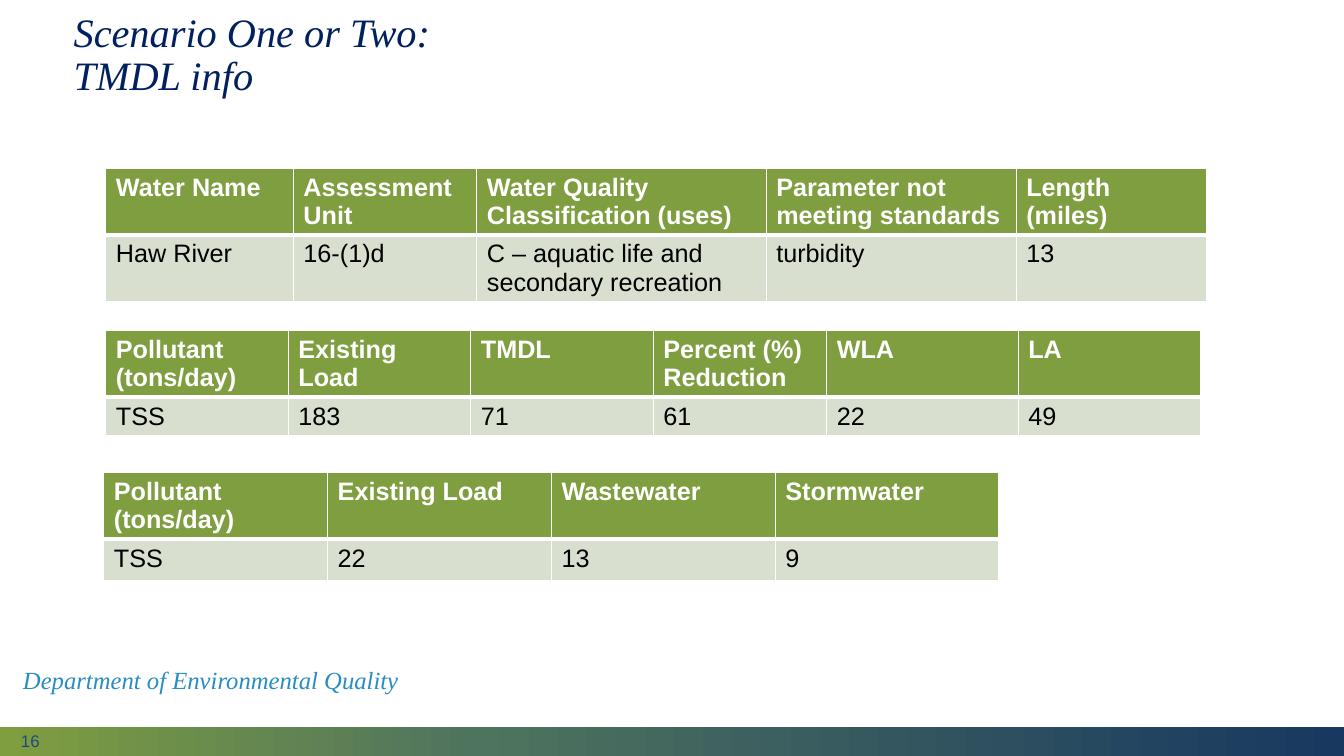
import copy
from dataclasses import dataclass

import pptx
import pptx.dml.color
import pptx.enum.shapes
import pptx.enum.text
import pptx.oxml
import pptx.oxml.ns
import pptx.util

Inches = pptx.util.Inches

COLORS = {
    "green": "7F9E3F",
    "teal": "4F745E",
    "deep_blue": "183860",
    "number_blue": "1F497D",
    "department_blue": "288DC2",
    "title_navy": "002060",
    "body_cell": "D8DFCF",
    "white": "FFFFFF",
    "black": "000000",
}
THIN_BORDER, THICK_BORDER = 1, 3


@dataclass
class TextStyle:
    font: str
    size: float
    color: str
    bold: bool = False
    italic: bool = False
    line_spacing: float = 1.0


@dataclass
class CellStyle:
    text: TextStyle
    fill: str
    borders: dict[str, int]


@dataclass
class DataTable:
    left: float
    top: float
    column_widths: list[float]
    row_heights: list[float]
    rows: list[list[str]]


TITLE_STYLE = TextStyle("Times New Roman", 28.8, "title_navy", italic=True, line_spacing=0.9)
DEPARTMENT_STYLE = TextStyle("Times New Roman", 17.6, "department_blue", italic=True, line_spacing=0.9)
NUMBER_STYLE = TextStyle("Arial", 12, "number_blue")

HEADER_CELL = CellStyle(
    TextStyle("Arial", 18, "white", bold=True), "green",
    {"L": THIN_BORDER, "R": THIN_BORDER, "T": THIN_BORDER, "B": THICK_BORDER},
)
BODY_CELL = CellStyle(
    TextStyle("Arial", 18, "black"), "body_cell",
    {"L": THIN_BORDER, "R": THIN_BORDER, "T": THICK_BORDER, "B": THIN_BORDER},
)

TABLES = [
    DataTable(1.05, 1.67, [1.86, 1.82, 2.87, 2.48, 1.89], [0.66, 0.65], [
        ["Water Name", "Assessment Unit", "Water Quality Classification (uses)",
         "Parameter not meeting standards", "Length (miles)"],
        ["Haw River", "16-(1)d", "C – aquatic life and secondary recreation", "turbidity", "13"],
    ]),
    DataTable(1.05, 3.28, [1.81, 1.81, 1.81, 1.72, 1.9, 1.81], [0.66, 0.37], [
        ["Pollutant (tons/day)", "Existing Load", "TMDL", "Percent (%) Reduction", "WLA", "LA"],
        ["TSS", "183", "71", "61", "22", "49"],
    ]),
    DataTable(1.03, 4.69, [2.22] * 4, [0.66, 0.41], [
        ["Pollutant (tons/day)", "Existing Load", "Wastewater", "Stormwater"],
        ["TSS", "22", "13", "9"],
    ]),
]


def rgb(name: str) -> pptx.dml.color.RGBColor:
    return pptx.dml.color.RGBColor.from_string(COLORS[name])


def write_lines(text_frame, lines: list[str], style: TextStyle) -> None:
    paragraph = text_frame.paragraphs[0]
    paragraph.alignment = pptx.enum.text.PP_ALIGN.LEFT
    paragraph.line_spacing = style.line_spacing
    for index, line in enumerate(lines):
        if index:
            paragraph.add_line_break()
        run = paragraph.add_run()
        run.text = line
        run.font.name = style.font
        run.font.size = pptx.util.Pt(style.size)
        run.font.bold = style.bold
        run.font.italic = style.italic
        run.font.color.rgb = rgb(style.color)


def fill_text_shape(shape, lines: list[str], style: TextStyle) -> None:
    text_frame = shape.text_frame
    text_frame.word_wrap = True
    text_frame.auto_size = pptx.enum.text.MSO_AUTO_SIZE.NONE
    text_frame.vertical_anchor = pptx.enum.text.MSO_ANCHOR.MIDDLE
    write_lines(text_frame, lines, style)


def add_label(slide, left: float, top: float, width: float, height: float,
              text: str, style: TextStyle) -> None:
    label = slide.shapes.add_textbox(Inches(left), Inches(top), Inches(width), Inches(height))
    fill_text_shape(label, [text], style)


def add_footer_band(slide) -> None:
    band = slide.shapes.add_shape(
        pptx.enum.shapes.MSO_SHAPE.RECTANGLE, Inches(0), Inches(7.21), Inches(13.33), Inches(0.29))
    band.shadow.inherit = False
    band.line.fill.background()
    band.fill.gradient()
    band.fill.gradient_angle = 0
    # The default gradient has two stops; a middle one is added
    first_stop = band.element.spPr.find(".//" + pptx.oxml.ns.qn("a:gs"))
    first_stop.addnext(copy.deepcopy(first_stop))
    stops = [(0, "green"), (0.35, "teal"), (1, "deep_blue")]
    for stop, (position, color) in zip(band.fill.gradient_stops, stops):
        stop.position = position
        stop.color.rgb = rgb(color)


def format_cell(cell, text: str, style: CellStyle) -> None:
    write_lines(cell.text_frame, [text], style.text)
    cell.fill.solid()
    cell.fill.fore_color.rgb = rgb(style.fill)
    properties = cell._tc.get_or_add_tcPr()
    for index, (side, points) in enumerate(style.borders.items()):
        border = pptx.oxml.parse_xml(
            f'<a:ln{side} {pptx.oxml.ns.nsdecls("a")} w="{int(pptx.util.Pt(points))}">'
            f'<a:solidFill><a:srgbClr val="{COLORS["white"]}"/></a:solidFill></a:ln{side}>')
        properties.insert(index, border)


def add_data_table(slide, data: DataTable) -> None:
    table = slide.shapes.add_table(
        len(data.rows), len(data.column_widths), Inches(data.left), Inches(data.top),
        Inches(sum(data.column_widths)), Inches(sum(data.row_heights))).table
    for column, width in zip(table.columns, data.column_widths):
        column.width = Inches(width)
    for row, height in zip(table.rows, data.row_heights):
        row.height = Inches(height)
    for row_index, texts in enumerate(data.rows):
        style = BODY_CELL if row_index else HEADER_CELL
        for column_index, text in enumerate(texts):
            format_cell(table.cell(row_index, column_index), text, style)


def main() -> None:
    presentation = pptx.Presentation()
    presentation.slide_width = Inches(13.33)
    presentation.slide_height = Inches(7.5)
    slide = presentation.slides.add_slide(presentation.slide_layouts[5])

    # Footer
    add_footer_band(slide)
    add_label(slide, 0.11, 7.27, 3, 0.15, "16", NUMBER_STYLE)
    add_label(slide, 0.13, 6.56, 4.1, 0.41, "Department of Environmental Quality", DEPARTMENT_STYLE)

    # Title
    title = slide.shapes.title
    title.left, title.top = Inches(0.63), Inches(0.25)
    title.width, title.height = Inches(9.36), Inches(0.61)
    fill_text_shape(title, ["Scenario One or Two:", "TMDL info"], TITLE_STYLE)

    # Tables
    for data in TABLES:
        add_data_table(slide, data)

    presentation.save("out.pptx")


if __name__ == "__main__":
    main()
